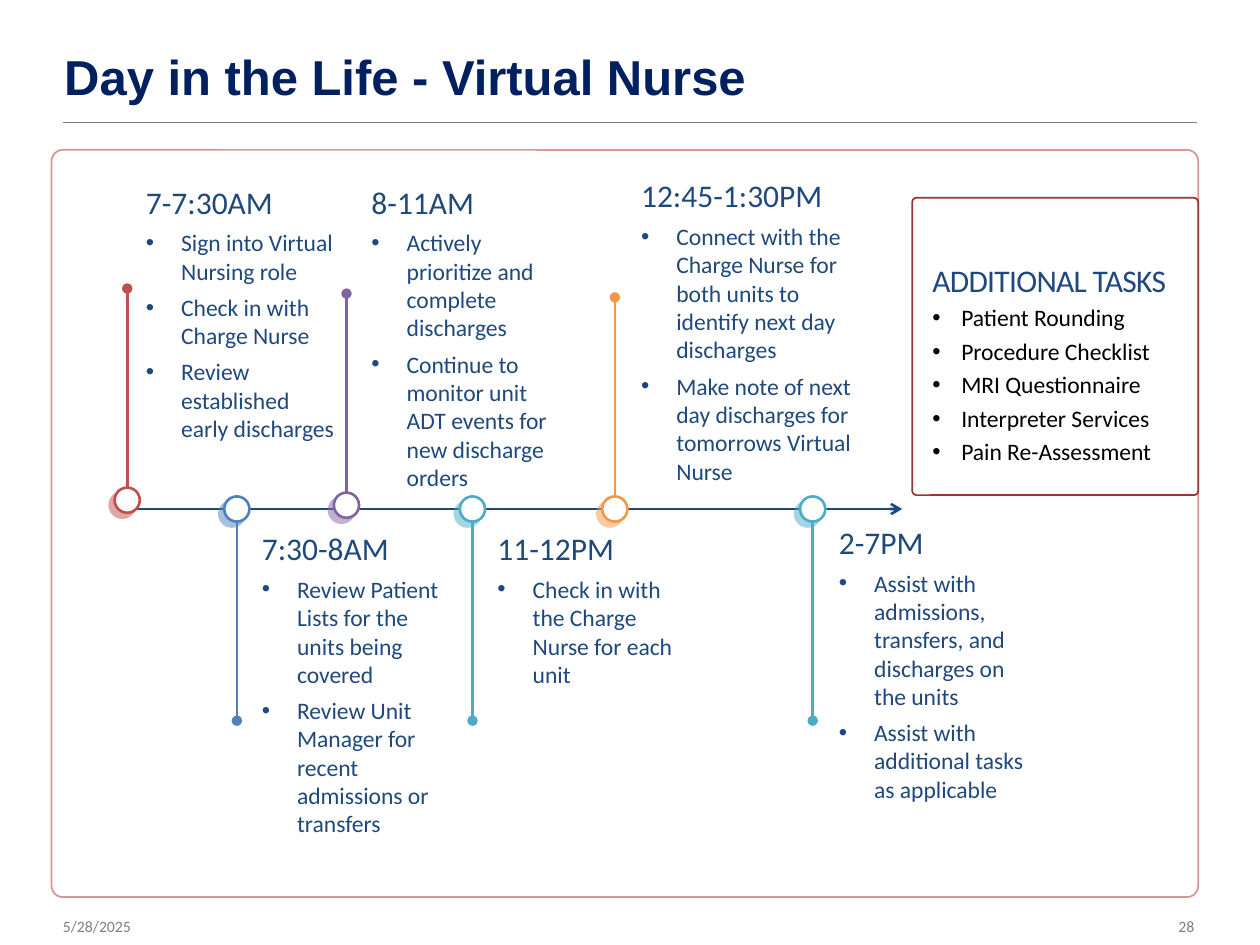
import pptx
import pptx.util
import pptx.dml.color
import pptx.enum.shapes
import pptx.enum.text
import pptx.oxml
import pptx.oxml.ns

Inches = pptx.util.Inches
Pt = pptx.util.Pt
SHAPE = pptx.enum.shapes.MSO_SHAPE
ALIGN = pptx.enum.text.PP_ALIGN
ANCHOR = pptx.enum.text.MSO_ANCHOR

HUES = {
    "title": "002060", "navy": "1F497D", "grey": "808080", "white": "FFFFFF",
    "black": "000000", "pink": "D99694", "wine": "953735", "red": "C0504D",
    "blue": "4F81BD", "plum": "8064A2", "teal": "4BACC6", "gold": "F79646",
}
DOT = 0.2
STEM = 1.58

EVENTS = [
    ("red", 1.01, 3.87, True, (1.06, 1.4, 1.7, 2.8), "7-7:30AM",
     ["Sign into Virtual Nursing role", "Check in with Charge Nurse",
      "Review established early discharges"]),
    ("blue", 1.88, 3.94, False, (1.98, 4.15, 1.7, 2.96), "7:30-8AM",
     ["Review Patient Lists for the units being covered",
      "Review Unit Manager for recent admissions or transfers"]),
    ("plum", 2.75, 3.91, True, (2.85, 1.4, 1.7, 2.96), "8-11AM",
     ["Actively prioritize and complete discharges",
      "Continue to monitor unit ADT events for new discharge orders"]),
    ("teal", 3.75, 3.94, False, (3.85, 4.15, 1.7, 1.76), "11-12PM",
     ["Check in with the Charge Nurse for each unit"]),
    ("gold", 4.88, 3.94, True, (4.99, 1.35, 2.04, 2.59), "12:45-1:30PM",
     ["Connect with the Charge Nurse for both units to identify next day discharges",
      "Make note of next day discharges for tomorrows Virtual Nurse"]),
    ("teal", 6.45, 3.94, False, (6.56, 4.1, 1.7, 2.36), "2-7PM",
     ["Assist with admissions, transfers, and discharges on the units",
      "Assist with additional tasks as applicable"]),
]
TASKS = ["Patient Rounding", "Procedure Checklist", "MRI Questionnaire",
         "Interpreter Services", "Pain Re-Assessment"]


def tint(name):
    return pptx.dml.color.RGBColor.from_string(HUES[name])


def add_xml(parent, text):
    space = pptx.oxml.ns.nsdecls("a")
    node = pptx.oxml.parse_xml(text.replace("/>", f" {space}/>", 1)
                               if text.endswith("/>") and text.count("<") == 1
                               else text.replace(">", f" {space}>", 1))
    parent.append(node)


def add_run(para, text, size, hue, face="Calibri", bold=False):
    run = para.add_run()
    run.text = text
    run.font.size = Pt(size)
    run.font.name = face
    run.font.bold = bold
    run.font.color.rgb = tint(hue)
    return run


def add_list(frame, head, items, hue, indent, lines=None):
    frame.word_wrap = True
    para = frame.paragraphs[0]
    para.alignment = ALIGN.LEFT
    para.space_after = Pt(4.5)
    first = add_run(para, head, 18, "navy")
    for item in items:
        para = frame.add_paragraph()
        para.alignment = ALIGN.LEFT
        props = para._p.get_or_add_pPr()
        props.set("marL", str(Inches(indent)))
        props.set("indent", str(-Inches(indent)))
        add_xml(props, '<a:buFont typeface="Arial"/>')
        add_xml(props, '<a:buChar char="•"/>')
        para.space_after = Pt(4.5)
        if lines:
            para.line_spacing = lines
        add_run(para, item, 13.5, hue)
    return first


def add_line(slide, start, end, hue, width, tail=None):
    line = slide.shapes.add_connector(
        pptx.enum.shapes.MSO_CONNECTOR.STRAIGHT,
        *[Inches(v) for v in (*start, *end)])
    line.line.color.rgb = tint(hue)
    line.line.width = Pt(width)
    if tail:
        add_xml(line.line._get_or_add_ln(), f'<a:tailEnd type="{tail}"/>')
    add_xml(line._element.spPr, "<a:effectLst/>")


def add_round(slide, box, hue, width, curve, alpha=None):
    shape = slide.shapes.add_shape(SHAPE.ROUNDED_RECTANGLE, *[Inches(v) for v in box])
    shape.adjustments[0] = curve
    shape.shadow.inherit = False
    shape.fill.solid()
    shape.fill.fore_color.rgb = tint("white")
    shape.line.color.rgb = tint(hue)
    shape.line.width = Pt(width)
    if alpha:
        fill = shape._element.spPr.find(pptx.oxml.ns.qn("a:solidFill"))
        add_xml(fill[0], f'<a:alpha val="{alpha * 1000}"/>')
    return shape


def add_dot(slide, box, hue):
    dot = add_round(slide, box, hue, 1.5, 0.5)
    glow = dot._element.spPr.find(pptx.oxml.ns.qn("a:effectLst"))
    add_xml(glow, f'<a:outerShdw blurRad="0" dist="{Pt(4)}" dir="8100000" algn="tr" '
                  f'rotWithShape="0"><a:srgbClr val="{HUES[hue]}">'
                  '<a:alpha val="50000"/></a:srgbClr></a:outerShdw>')


def add_title(slide, box):
    left, top, width, height = box
    title = slide.shapes.title
    title.left, title.top, title.width, title.height = [Inches(v) for v in box]
    frame = title.text_frame
    frame.vertical_anchor = ANCHOR.MIDDLE
    para = frame.paragraphs[0]
    para.alignment = ALIGN.LEFT
    add_run(para, "Day in the Life - Virtual Nurse", 28, "title", "Arial", True)
    rule = top + height + 0.06
    add_line(slide, (left + 0.09, rule), (left + width - 0.01, rule), "grey", 0.75)


def add_foot(slide, box, text, align):
    frame = slide.shapes.add_textbox(*[Inches(v) for v in box]).text_frame
    frame.word_wrap = True
    frame.margin_left = frame.margin_right = Inches(0.5)
    para = frame.paragraphs[0]
    para.alignment = align
    add_run(para, text, 9, "grey")


def add_event(slide, box, hue, mid, top, above, head, items):
    start = top if above else top + DOT
    end = start - STEM if above else start + STEM
    add_line(slide, (mid, start), (mid, end), hue, 1.5, "oval")
    add_dot(slide, (mid - DOT / 2, top, DOT, DOT), hue)
    text = slide.shapes.add_textbox(*[Inches(v) for v in box])
    add_list(text.text_frame, head, items, "navy", 0.28)


def add_track(slide, box):
    left, top, width, height = box
    add_round(slide, box, "pink", 1, 0.015, 70)
    axis = top + 2.85
    add_line(slide, (left + 0.6, axis), (left + 6.75, axis), "navy", 1.5, "arrow")
    for hue, mid, level, above, area, head, items in EVENTS:
        add_event(slide, area, hue, mid, level, above, head, items)


def add_tasks(slide, box):
    frame = add_round(slide, box, "wine", 1, 0.015, 70).text_frame
    frame.vertical_anchor = ANCHOR.TOP
    frame.margin_left = frame.margin_right = frame.margin_bottom = Inches(0.15)
    frame.margin_top = Inches(0.49)
    head = add_list(frame, "ADDITIONAL TASKS", TASKS, "black", 0.23, 0.9)
    head._r.get_or_add_rPr().set("spc", "-40")


def main():
    deck = pptx.Presentation()
    deck.slide_width, deck.slide_height = Inches(10), Inches(7.5)
    slide = deck.slides.add_slide(deck.slide_layouts[5])
    add_title(slide, (0.41, 0.29, 9.1, 0.62))
    add_foot(slide, (0, 7.23, 2.5, 0.25), "5/28/2025", ALIGN.LEFT)
    add_foot(slide, (5.68, 7.23, 4.3, 0.25), "28", ALIGN.RIGHT)
    add_track(slide, (0.41, 1.19, 9.1, 5.93))
    add_tasks(slide, (7.24, 1.57, 2.27, 2.36))
    deck.save("out.pptx")


if __name__ == "__main__":
    main()
